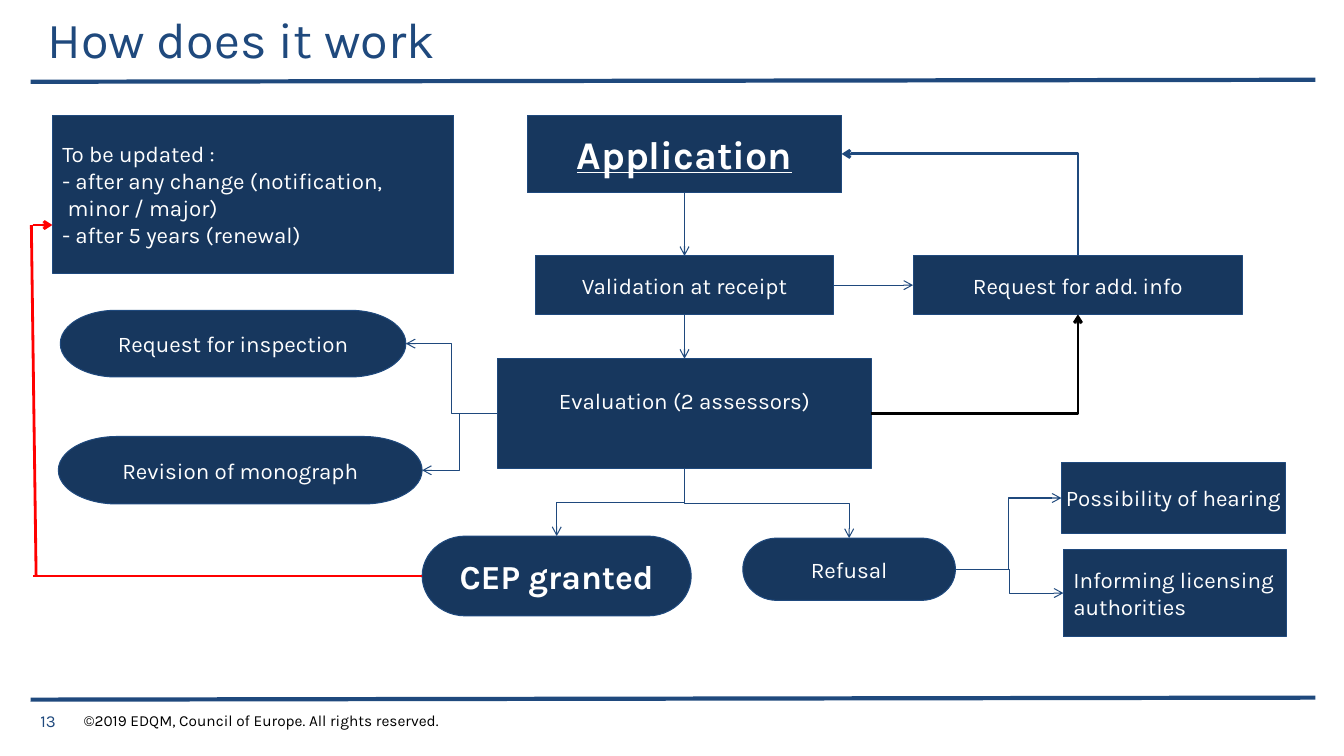
import dataclasses

import lxml.etree
import pptx
import pptx.dml.color
import pptx.enum.shapes
import pptx.enum.text
import pptx.oxml.ns
import pptx.util

Cm = pptx.util.Cm
Pt = pptx.util.Pt
qn = pptx.oxml.ns.qn
RGB = pptx.dml.color.RGBColor.from_string
SHAPE = pptx.enum.shapes.MSO_SHAPE
CONNECTOR = pptx.enum.shapes.MSO_CONNECTOR
ALIGN = pptx.enum.text.PP_ALIGN
ANCHOR = pptx.enum.text.MSO_ANCHOR

TOP, LEFT, BOTTOM, RIGHT = range(4)  # connection sites


@dataclasses.dataclass(frozen=True)
class Theme:
    font: str = "Karla"
    blue: str = "1F497D"
    navy: str = "17375E"
    white: str = "FFFFFF"
    black: str = "000000"
    red: str = "FF0000"
    title_shadow: str = "EEECE1"
    title: int = 36
    application: int = 28
    granted: int = 24
    body: int = 16
    number: int = 12
    footer: int = 11
    thin: float = 0.75
    thick: float = 2
    rule: float = 3


THEME = Theme()


def write(frame, text, size, color, align=ALIGN.LEFT, anchor=ANCHOR.MIDDLE,
          bold=False, underline=False):
    """Fill a text frame, one paragraph per line of text."""
    frame.text = text
    frame.vertical_anchor = anchor
    for para in frame.paragraphs:
        para.alignment = align
        para.font.name = THEME.font
        para.font.size = Pt(size)
        para.font.color.rgb = RGB(color)
        para.font.bold = bold
        para.font.underline = underline


def add_title(page, text):
    title = page.shapes.title
    title.left, title.top, title.width, title.height = Cm(0.94), Cm(0.2), Cm(28.78), Cm(1.52)
    title.text_frame.auto_size = pptx.enum.text.MSO_AUTO_SIZE.NONE
    write(title.text_frame, text, THEME.title, THEME.blue)
    # Soft offset shadow behind the letters
    span = title.text_frame.paragraphs[0].runs[0]
    effects = lxml.etree.SubElement(span.font._element, qn("a:effectLst"))
    shadow = lxml.etree.SubElement(effects, qn("a:outerShdw"),
                                   dist="35921", dir="2700000", algn="ctr")
    lxml.etree.SubElement(shadow, qn("a:srgbClr"), val=THEME.title_shadow)


def add_label(page, text, place, size, color, align, anchor):
    box = page.shapes.add_textbox(*map(Cm, place))
    box.text_frame.word_wrap = True
    write(box.text_frame, text, size, color, align, anchor)


def add_step(page, kind, text, place, size=THEME.body, align=ALIGN.CENTER, **style):
    box = page.shapes.add_shape(kind, *map(Cm, place))
    box.shadow.inherit = False
    box.fill.solid()
    box.fill.fore_color.rgb = RGB(THEME.navy)
    box.line.color.rgb = RGB(THEME.blue)
    box.line.width = Pt(THEME.thin)
    box.text_frame.word_wrap = align == ALIGN.LEFT
    if align == ALIGN.LEFT:
        box.text_frame.margin_right = 0
    write(box.text_frame, text, size, THEME.white, align, **style)
    return box


def add_line(page, start, end, color, width, arrow=False, kind=CONNECTOR.STRAIGHT):
    link = page.shapes.add_connector(kind, *start, *end)
    link.line.color.rgb = RGB(color)
    link.line.width = Pt(width)
    properties = link._element.spPr
    if arrow:
        lxml.etree.SubElement(properties.find(qn("a:ln")), qn("a:tailEnd"), type="arrow")
    lxml.etree.SubElement(properties, qn("a:effectLst"))
    return link


def side_middle(box, side):
    across = {LEFT: 0, RIGHT: box.width}.get(side, box.width // 2)
    down = {TOP: 0, BOTTOM: box.height}.get(side, box.height // 2)
    return box.left + across, box.top + down


def join(page, source, source_side, target, target_side, color=THEME.blue, width=THEME.thin):
    """Arrow between two steps: straight where they line up, else an elbow."""
    start, end = side_middle(source, source_side), side_middle(target, target_side)
    run, drop = end[0] - start[0], end[1] - start[1]
    straight = min(abs(run), abs(drop)) < Cm(0.02)
    kind = CONNECTOR.STRAIGHT if straight else CONNECTOR.ELBOW
    link = add_line(page, start, end, color, width, True, kind)
    link.begin_connect(source, source_side)
    link.end_connect(target, target_side)
    if straight:
        return
    properties = link._element.spPr
    starts_vertical = source_side in (TOP, BOTTOM)
    if starts_vertical != (target_side in (TOP, BOTTOM)):
        properties.find(qn("a:prstGeom")).set("prst", "bentConnector2")
    if starts_vertical:
        # Turn the elbow a quarter about its centre
        frame = properties.find(qn("a:xfrm"))
        frame.set("rot", str((90 if drop > 0 else 270) * 60000))
        frame.set("flipH", "0")
        frame.set("flipV", "1" if (run > 0) == (drop > 0) else "0")
        link.width, link.height = abs(drop), abs(run)
        link.left = (start[0] + end[0] - abs(drop)) // 2
        link.top = (start[1] + end[1] - abs(run)) // 2


def main():
    deck = pptx.Presentation()
    deck.slide_width, deck.slide_height = Cm(33.87), Cm(19.05)
    page = deck.slides.add_slide(deck.slide_layouts[5])

    # Title, rules and footer
    add_title(page, "How does it work")
    for level in (2.06, 17.63):
        add_line(page, (Cm(0.77), Cm(level)), (Cm(33.15), Cm(level - 0.05)),
                 THEME.blue, THEME.rule)
    add_label(page, "13", (0.77, 17.78, 1.14, 0.76), THEME.number, THEME.blue,
              ALIGN.LEFT, ANCHOR.TOP)
    add_label(page, "©2019 EDQM, Council of Europe. All rights reserved.",
              (1.5, 17.65, 10.19, 1.02), THEME.footer, THEME.black,
              ALIGN.CENTER, ANCHOR.MIDDLE)

    # Steps
    process, terminator = SHAPE.FLOWCHART_PROCESS, SHAPE.FLOWCHART_TERMINATOR
    application = add_step(page, SHAPE.RECTANGLE, "Application", (13.29, 2.9, 7.92, 1.96),
                           THEME.application, bold=True, underline=True)
    granted = add_step(page, terminator, "CEP granted", (10.64, 13.51, 6.78, 2.01),
                       THEME.granted, bold=True)
    updated = add_step(page, process,
                       "To be updated :\n- after any change (notification,\v minor / major)\n"
                       "- after 5 years (renewal)", (1.32, 2.9, 10.11, 3.99), align=ALIGN.LEFT)
    more_info = add_step(page, process, "Request for add. info", (23.01, 6.45, 8.31, 1.47))
    evaluation = add_step(page, process, "Evaluation (2 assessors)", (12.54, 9.04, 9.42, 2.77))
    evaluation.text_frame.margin_bottom = Cm(0.8)
    inspection = add_step(page, terminator, "Request for inspection", (1.52, 7.82, 8.71, 1.68))
    monograph = add_step(page, terminator, "Revision of monograph", (1.47, 11, 9.17, 1.7))
    refusal = add_step(page, terminator, "Refusal", (18.72, 13.56, 5.36, 1.57))
    hearing = add_step(page, process, "Possibility of hearing", (26.75, 11.66, 5.64, 1.78))
    informing = add_step(page, process, "Informing licensing\nauthorities",
                         (26.8, 13.84, 5.61, 2.21), align=ALIGN.LEFT)
    validation = add_step(page, process, "Validation at receipt", (13.49, 6.45, 7.52, 1.47))

    # Arrows between steps
    join(page, application, BOTTOM, validation, TOP)
    join(page, validation, BOTTOM, evaluation, TOP)
    join(page, validation, RIGHT, more_info, LEFT)
    for outcome in (inspection, monograph):
        join(page, evaluation, LEFT, outcome, RIGHT)
    for outcome in (granted, refusal):
        join(page, evaluation, BOTTOM, outcome, TOP)
    for outcome in (hearing, informing):
        join(page, refusal, RIGHT, outcome, LEFT)
    join(page, evaluation, RIGHT, more_info, BOTTOM, THEME.black, THEME.thick)
    join(page, more_info, TOP, application, LEFT + 2, width=THEME.thick)

    # Red return path from the granted certificate to its updates
    granted_left = side_middle(granted, LEFT)
    update_level = Cm(5.67)
    back = add_line(page, granted_left, (Cm(0.84), granted_left[1]), THEME.red, THEME.thick)
    back.begin_connect(granted, LEFT)
    add_line(page, (Cm(0.79), update_level), (Cm(0.91), granted_left[1]),
             THEME.red, THEME.thick)
    add_line(page, (Cm(0.84), update_level), (updated.left, update_level),
             THEME.red, THEME.thick, arrow=True)

    deck.save("out.pptx")


if __name__ == "__main__":
    main()
